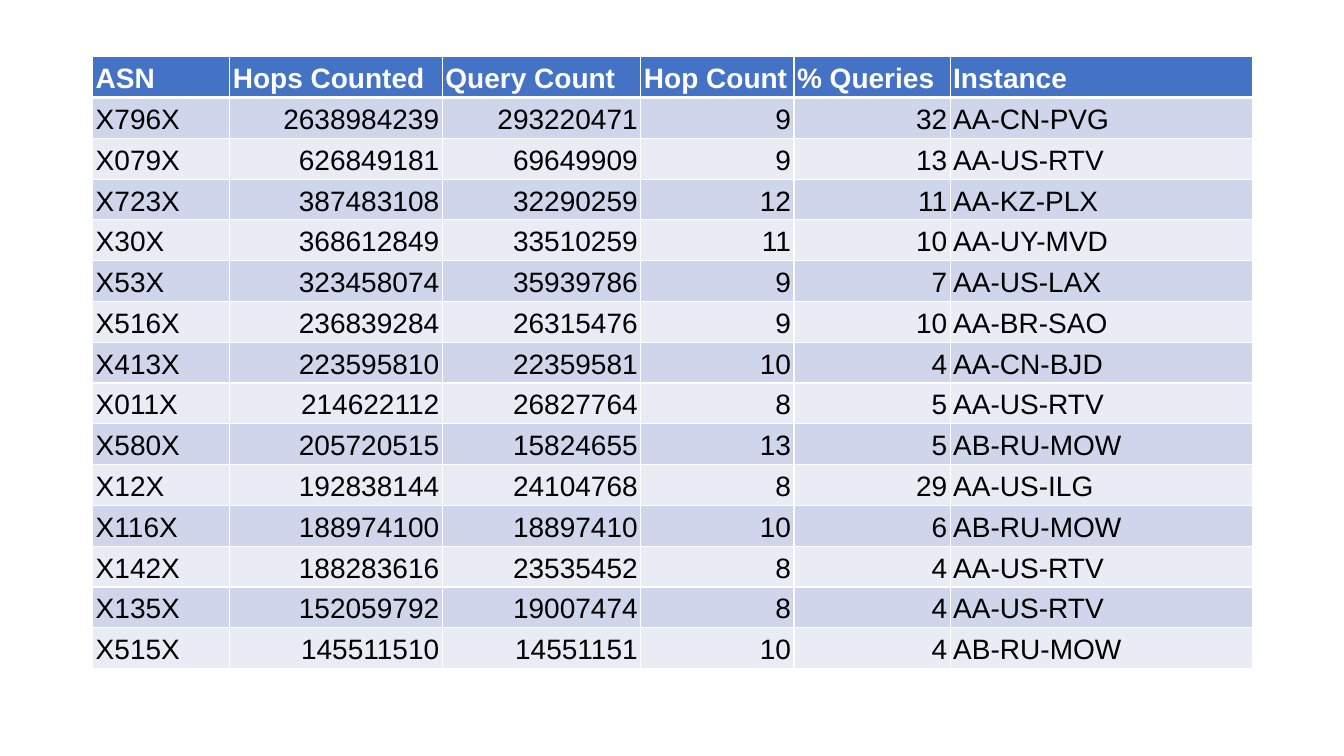
from lxml import etree
from pptx import Presentation
from pptx import util as u
from pptx.dml.color import RGBColor
from pptx.enum import text
from pptx.oxml.ns import qn

COLUMNS = {"ASN": 1.36, "Hops Counted": 2.11, "Query Count": 1.97,
           "Hop Count": 1.52, "% Queries": 1.55, "Instance": 3}
QUERIES = [
    ("X796X", 2638984239, 293220471, 9, 32, "AA-CN-PVG"),
    ("X079X", 626849181, 69649909, 9, 13, "AA-US-RTV"),
    ("X723X", 387483108, 32290259, 12, 11, "AA-KZ-PLX"),
    ("X30X", 368612849, 33510259, 11, 10, "AA-UY-MVD"),
    ("X53X", 323458074, 35939786, 9, 7, "AA-US-LAX"),
    ("X516X", 236839284, 26315476, 9, 10, "AA-BR-SAO"),
    ("X413X", 223595810, 22359581, 10, 4, "AA-CN-BJD"),
    ("X011X", 214622112, 26827764, 8, 5, "AA-US-RTV"),
    ("X580X", 205720515, 15824655, 13, 5, "AB-RU-MOW"),
    ("X12X", 192838144, 24104768, 8, 29, "AA-US-ILG"),
    ("X116X", 188974100, 18897410, 10, 6, "AB-RU-MOW"),
    ("X142X", 188283616, 23535452, 8, 4, "AA-US-RTV"),
    ("X135X", 152059792, 19007474, 8, 4, "AA-US-RTV"),
    ("X515X", 145511510, 14551151, 10, 4, "AB-RU-MOW"),
]


def rgb(value):
    return RGBColor.from_string(value)


def write(tf, content, *, font, size, color, bold=False, align=text.PP_ALIGN.LEFT):
    p = tf.paragraphs[0]
    p.alignment = align
    r = p.add_run()
    r.text = content
    r.font.name, r.font.size, r.font.bold = font, u.Pt(size), bold
    r.font.color.rgb = rgb(color)


class Deck:
    font, size = "Arial", 20
    header, bands, rule = "4472C4", ("CFD5EA", "E9EBF5"), "FFFFFF"
    header_text, body_text = "FFFFFF", "000000"
    inset = u.Inches(0.03)

    def __init__(self, prs):
        self.prs = prs
        self.slide = prs.slides.add_slide(prs.slide_layouts[6])

    def across(self, percent):
        return u.Emu(round(self.prs.slide_width * percent / 100))

    def down(self, percent):
        return u.Emu(round(self.prs.slide_height * percent / 100))

    def borders(self, cell, **widths):
        """Rule the four sides; widths in points by side, L, R, T or B."""
        tcPr = cell._tc.get_or_add_tcPr()
        for side in "LRTB":
            ln = etree.SubElement(tcPr, qn(f"a:ln{side}"), w=str(u.Pt(widths.get(side, 1))))
            fill = etree.SubElement(ln, qn("a:solidFill"))
            etree.SubElement(fill, qn("a:srgbClr"), val=self.rule)

    def cell(self, cell, value, row):
        is_header = row == 0
        cell.margin_left = cell.margin_right = self.inset
        cell.margin_top = cell.margin_bottom = self.inset
        cell.vertical_anchor = text.MSO_ANCHOR.BOTTOM
        self.borders(cell, B=3 if is_header else 1, T=3 if row == 1 else 1)
        cell.fill.solid()
        cell.fill.fore_color.rgb = rgb(self.header if is_header else self.bands[(row - 1) % 2])
        align = text.PP_ALIGN.RIGHT if isinstance(value, int) else text.PP_ALIGN.LEFT
        write(cell.text_frame, str(value), font=self.font, size=self.size, bold=is_header,
              color=self.header_text if is_header else self.body_text, align=align)

    def table(self, columns, records, left, top, width, height):
        """Place a table by percent of the slide; columns maps headings to relative widths."""
        rows = [tuple(columns), *records]
        frame = self.slide.shapes.add_table(
            len(rows), len(columns), self.across(left), self.down(top),
            self.across(width), self.down(height))
        table = frame.table
        total = sum(columns.values())
        for column, share in zip(table.columns, columns.values()):
            column.width = self.across(width * share / total)
        for i, values in enumerate(rows):
            table.rows[i].height = self.down(height / len(rows))
            for j, value in enumerate(values):
                self.cell(table.cell(i, j), value, i)


def main():
    prs = Presentation()
    prs.slide_width, prs.slide_height = u.Inches(13.33), u.Inches(7.5)
    deck = Deck(prs)
    deck.table(COLUMNS, QUERIES, left=6.9, top=7.5, width=86.3, height=81)
    prs.save("out.pptx")


if __name__ == "__main__":
    main()
